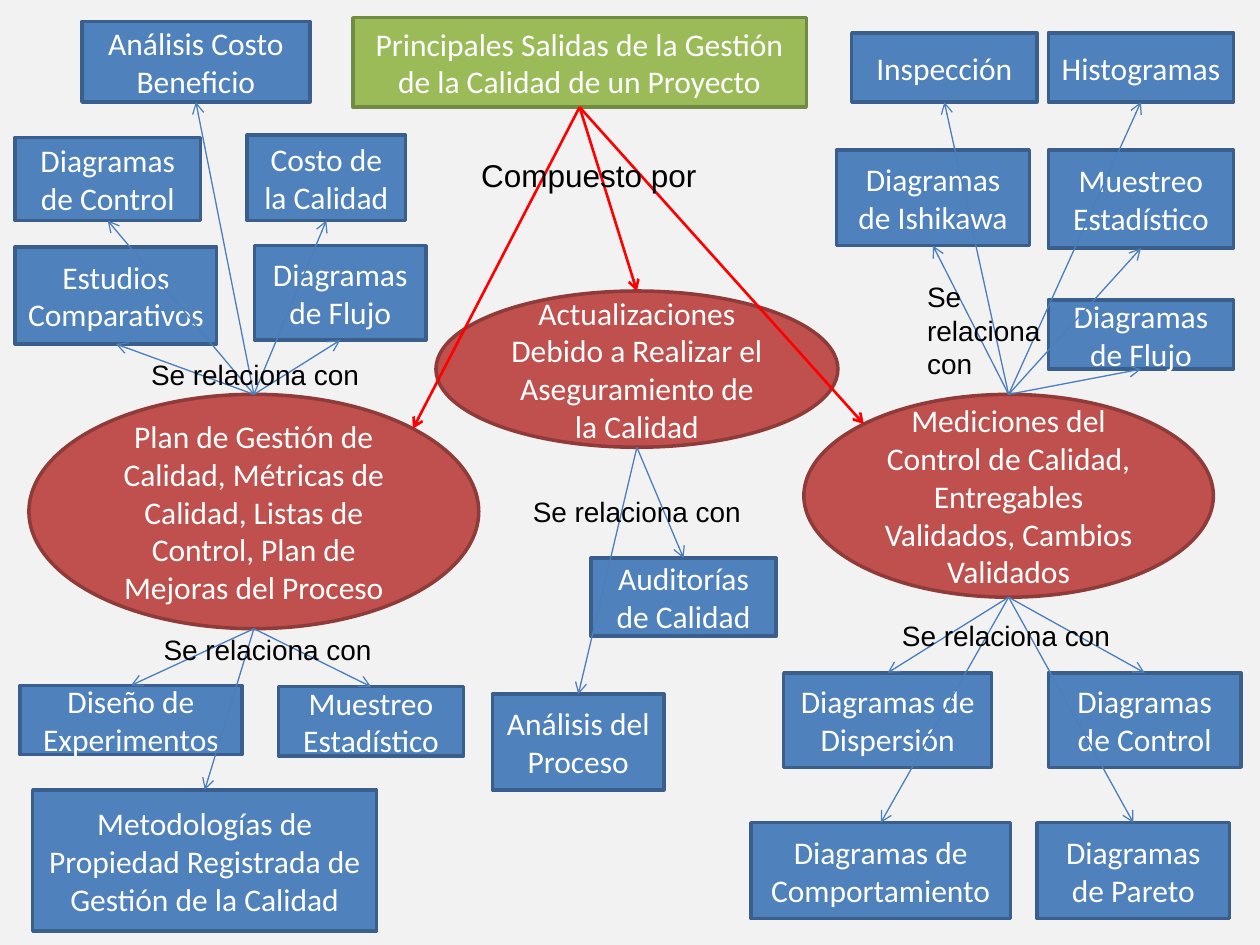
from dataclasses import dataclass
from math import sqrt

from lxml.etree import SubElement
from pptx import Presentation
from pptx.dml.color import RGBColor
from pptx.enum.shapes import MSO_CONNECTOR, MSO_SHAPE
from pptx.enum.text import MSO_ANCHOR, MSO_AUTO_SIZE, PP_ALIGN
from pptx.oxml.ns import qn
from pptx.shapes.autoshape import Shape
from pptx.shapes.connector import Connector
from pptx.slide import Slide
from pptx.util import Inches, Pt

PAPER = RGBColor(0xF2, 0xF2, 0xF2)
WHITE = RGBColor(0xFF, 0xFF, 0xFF)
BLACK = RGBColor(0x00, 0x00, 0x00)
RED = RGBColor(0xFF, 0x00, 0x00)
STEEL = RGBColor(0x4B, 0x7E, 0xBC)
TOP, BOTTOM = 0, 2


@dataclass(frozen=True)
class Style:
    form: MSO_SHAPE
    fill: RGBColor
    edge: RGBColor


@dataclass(frozen=True)
class Node:
    text: str
    left: float
    top: float
    width: float
    height: float

    @property
    def mid(self) -> float:
        return self.left + self.width / 2

    @property
    def base(self) -> float:
        return self.top + self.height


@dataclass(frozen=True)
class Group:
    hub: Node
    leaves: tuple[Node, ...]


@dataclass(frozen=True)
class Label:
    left: float
    top: float
    text: str = "Se relaciona con"
    width: float = 2.52
    height: float = 0.37
    size: int = 16


ROOT_STYLE = Style(MSO_SHAPE.RECTANGLE, RGBColor(0x9B, 0xBB, 0x59), RGBColor(0x73, 0x8A, 0x42))
HUB_STYLE = Style(MSO_SHAPE.OVAL, RGBColor(0xC0, 0x50, 0x4D), RGBColor(0x8E, 0x3B, 0x39))
LEAF_STYLE = Style(MSO_SHAPE.RECTANGLE, RGBColor(0x4F, 0x81, 0xBD), RGBColor(0x3A, 0x5F, 0x8C))

ROOT = Node("Principales Salidas de la Gestión de la Calidad de un Proyecto", 2.8, 0.14, 3.6, 0.71)
PLAN = Group(
    Node("Plan de Gestión de Calidad, Métricas de Calidad, Listas de Control, "
         "Plan de Mejoras del Proceso", 0.23, 3.13, 3.57, 1.86),
    (
        Node("Estudios Comparativos", 0.12, 1.96, 1.6, 0.77),
        Node("Diagramas de Flujo", 2.02, 1.95, 1.36, 0.75),
        Node("Costo de la Calidad", 1.96, 1.07, 1.26, 0.68),
        Node("Diagramas de Control", 0.12, 1.09, 1.47, 0.66),
        Node("Análisis Costo Beneficio", 0.65, 0.17, 1.81, 0.64),
        Node("Diseño de Experimentos", 0.16, 5.44, 1.76, 0.55),
        Node("Muestreo Estadístico", 2.21, 5.45, 1.47, 0.55),
        Node("Metodologías de Propiedad Registrada de Gestión de la Calidad",
             0.26, 6.27, 2.73, 1.12),
    ),
)
UPDATES = Group(
    Node("Actualizaciones Debido a Realizar el Aseguramiento de la Calidad",
         3.46, 2.31, 3.19, 1.24),
    (
        Node("Auditorías de Calidad", 4.69, 4.43, 1.47, 0.62),
        Node("Análisis del Proceso", 3.91, 5.51, 1.36, 0.76),
    ),
)
CONTROL = Group(
    Node("Mediciones del Control de Calidad, Entregables Validados, Cambios Validados",
         6.38, 3.13, 3.25, 1.61),
    (
        Node("Diagramas de Ishikawa", 6.64, 1.19, 1.53, 0.76),
        Node("Diagramas de Flujo", 8.32, 2.38, 1.47, 0.55),
        Node("Muestreo Estadístico", 8.32, 1.19, 1.47, 0.78),
        Node("Inspección", 6.76, 0.26, 1.47, 0.55),
        Node("Histogramas", 8.32, 0.26, 1.47, 0.55),
        Node("Diagramas de Dispersión", 6.22, 5.34, 1.65, 0.75),
        Node("Diagramas de Control", 8.32, 5.34, 1.53, 0.75),
        Node("Diagramas de Comportamiento", 5.96, 6.53, 2.06, 0.76),
        Node("Diagramas de Pareto", 8.23, 6.53, 1.53, 0.76),
    ),
)
GROUPS = (PLAN, UPDATES, CONTROL)
LABELS = (
    Label(3.72, 1.19, "Compuesto por", height=0.4, size=18),
    Label(7.26, 2.17, width=1.23, height=0.91),
    Label(7.06, 4.86),
    Label(4.13, 3.88),
    Label(1.2, 4.97),
    Label(1.1, 2.79),
)


def add_node(slide: Slide, node: Node, style: Style) -> Shape:
    shape = slide.shapes.add_shape(style.form, Inches(node.left), Inches(node.top),
                                   Inches(node.width), Inches(node.height))
    shape.shadow.inherit = False
    shape.fill.solid()
    shape.fill.fore_color.rgb = style.fill
    shape.line.color.rgb = style.edge
    shape.line.width = Pt(2)
    frame = shape.text_frame
    frame.word_wrap = True
    frame.vertical_anchor = MSO_ANCHOR.MIDDLE
    line = frame.paragraphs[0]
    line.text = node.text
    line.alignment = PP_ALIGN.CENTER
    line.font.name, line.font.size = "Calibri", Pt(18)
    line.font.color.rgb = WHITE
    return shape


def add_label(slide: Slide, label: Label) -> None:
    box = slide.shapes.add_textbox(Inches(label.left), Inches(label.top),
                                   Inches(label.width), Inches(label.height))
    frame = box.text_frame
    frame.word_wrap = True
    frame.auto_size = MSO_AUTO_SIZE.SHAPE_TO_FIT_TEXT
    line = frame.paragraphs[0]
    line.text = label.text
    line.font.name, line.font.size = "Arial", Pt(label.size)
    line.font.color.rgb = BLACK


def add_arrow(slide: Slide, start: tuple[float, float], end: tuple[float, float],
              color: RGBColor, width: float) -> Connector:
    arrow = slide.shapes.add_connector(MSO_CONNECTOR.STRAIGHT,
                                       *map(Inches, start), *map(Inches, end))
    arrow.line.color.rgb = color
    arrow.line.width = Pt(width)
    SubElement(arrow.line._get_or_add_ln(), qn("a:tailEnd"), type="arrow")
    SubElement(arrow._element.spPr, qn("a:effectLst"))
    return arrow


def link_root(slide: Slide, root: Shape, hub: Node) -> None:
    """Point from the root to the nearest of the hub's top and upper diagonals."""
    side = (ROOT.mid > hub.left + hub.width) - (ROOT.mid < hub.left)
    reach = sqrt(0.5) if side else 0
    rise = sqrt(0.5) if side else 1
    end = (hub.mid + side * reach * hub.width / 2, hub.top + (1 - rise) * hub.height / 2)
    arrow = add_arrow(slide, (ROOT.mid, ROOT.base), end, RED, 1.5)
    arrow.begin_connect(root, BOTTOM)


def link_leaf(slide: Slide, hub: Node, oval: Shape, leaf: Node, box: Shape) -> None:
    above = leaf.top < hub.top
    start = (hub.mid, hub.top if above else hub.base)
    end = (leaf.mid, leaf.base if above else leaf.top)
    arrow = add_arrow(slide, start, end, STEEL, 0.75)
    if above:
        arrow.begin_connect(oval, TOP)
    arrow.end_connect(box, BOTTOM if above else TOP)


def main() -> None:
    deck = Presentation()
    deck.slide_width, deck.slide_height = Inches(10), Inches(7.5)
    slide = deck.slides.add_slide(deck.slide_layouts[6])
    slide.background.fill.solid()
    slide.background.fill.fore_color.rgb = PAPER

    root = add_node(slide, ROOT, ROOT_STYLE)
    ovals = [add_node(slide, group.hub, HUB_STYLE) for group in GROUPS]
    for group in GROUPS:
        link_root(slide, root, group.hub)
    for group, oval in zip(GROUPS, ovals):
        boxes = [add_node(slide, leaf, LEAF_STYLE) for leaf in group.leaves]
        for leaf, box in zip(group.leaves, boxes):
            link_leaf(slide, group.hub, oval, leaf, box)
    for label in LABELS:
        add_label(slide, label)
    deck.save("out.pptx")


if __name__ == "__main__":
    main()
